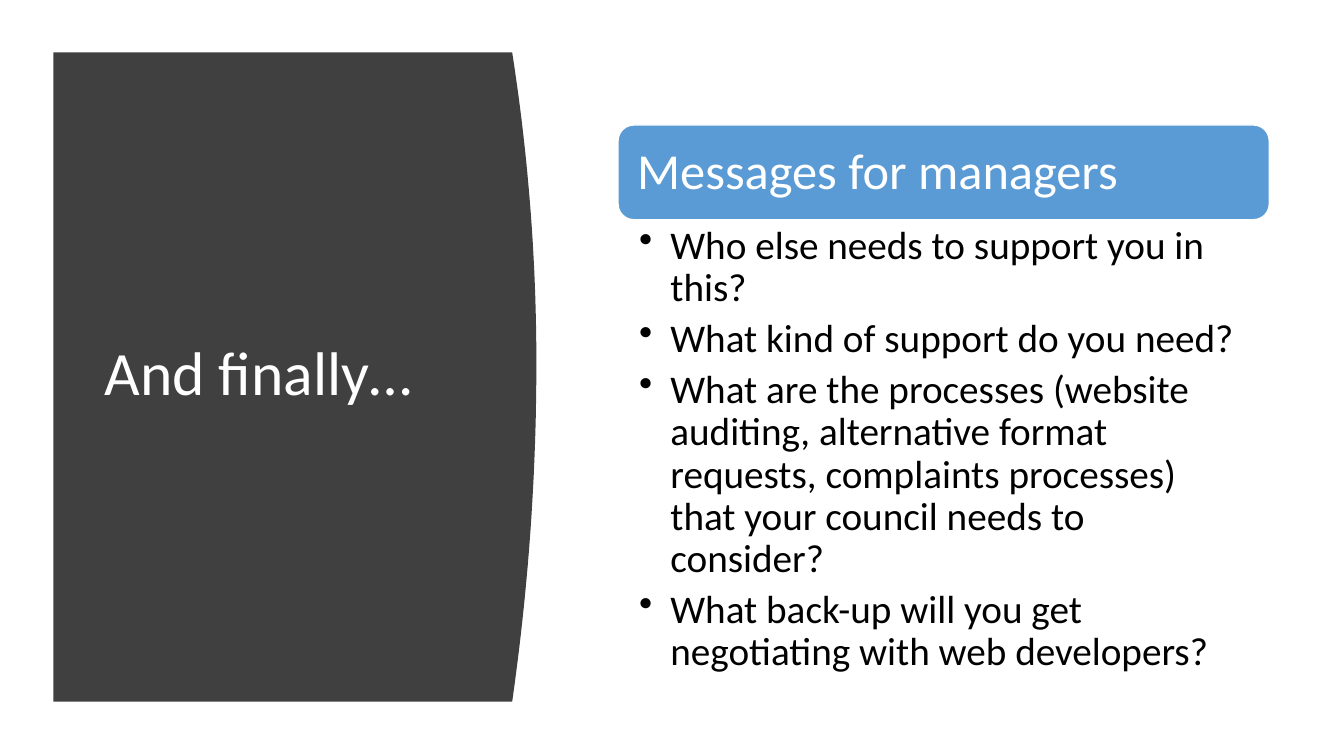
from dataclasses import dataclass

from lxml.etree import SubElement
from pptx import Presentation
from pptx.dml.color import RGBColor
from pptx.enum.shapes import MSO_SHAPE
from pptx.enum.text import MSO_ANCHOR
from pptx.oxml.ns import qn
from pptx.shapes.autoshape import Shape
from pptx.slide import Slide
from pptx.util import Inches, Pt

FONT = "Calibri"
WHITE, BLACK, CHARCOAL, BLUE = "FFFFFF", "000000", "404040", "5B9BD5"
BULLET_INDENT = 0.31


@dataclass(frozen=True)
class Box:
    left: float
    top: float
    width: float
    height: float

    def lengths(self) -> list[int]:
        return [Inches(v) for v in (self.left, self.top, self.width, self.height)]


@dataclass(frozen=True)
class Panel:
    left: float
    top: float
    edge: float      # right side at the top and bottom corners
    bottom: float
    bulge: float     # how far the right side swells
    peak: float      # height on the slide of the widest point


PANEL = Panel(left=0.53, top=0.52, edge=5.08, bottom=6.96, bulge=0.24, peak=3.6)
TITLE_BOX = Box(0.94, 1.11, 3.74, 5.24)
HEADING_BOX = Box(6.13, 1.24, 6.46, 0.94)
HEADING_TEXT_BOX = Box(6.17, 1.29, 6.37, 0.85)
QUESTIONS_BOX = Box(6.13, 2.19, 6.46, 4.73)
QUESTIONS = [
    "Who else needs to support you in this?",
    "What kind of support do you need?",
    "What are the processes (website auditing, alternative format requests, "
    "complaints processes) that your council needs to consider?",
    "What back-up will you get negotiating with web developers?",
]


def color(value: str) -> RGBColor:
    return RGBColor.from_string(value)


def fill_shape(shape: Shape, fill: str, line: str | None = None) -> None:
    shape.shadow.inherit = False
    shape.fill.solid()
    shape.fill.fore_color.rgb = color(fill)
    if line:
        shape.line.color.rgb = color(line)
        shape.line.width = Pt(1)
    else:
        shape.line.fill.background()


def add_curved_panel(slide: Slide, panel: Panel, steps: int = 48) -> None:
    """Draw a block whose right side is two half parabolas meeting at the peak."""
    curve = []
    for step in range(steps + 1):
        y = panel.top + (panel.bottom - panel.top) * step / steps
        end = panel.top if y < panel.peak else panel.bottom
        offset = (y - panel.peak) / (end - panel.peak)
        curve.append((panel.edge + panel.bulge * (1 - offset**2), y))
    outline = [*curve, (panel.left, panel.bottom)]
    builder = slide.shapes.build_freeform(
        Inches(panel.left), Inches(panel.top), scale=1.0
    )
    builder.add_line_segments([(Inches(x), Inches(y)) for x, y in outline])
    fill_shape(builder.convert_to_shape(), CHARCOAL)


def add_text(
    slide: Slide,
    box: Box,
    paragraphs: list[str],
    *,
    size: float,
    ink: str = WHITE,
    anchor: MSO_ANCHOR = MSO_ANCHOR.MIDDLE,
    insets: tuple[float, float, float, float] = (0.1, 0.05, 0.1, 0.05),
    space_after: float = 0,
    bulleted: bool = False,
) -> None:
    frame = slide.shapes.add_textbox(*box.lengths()).text_frame
    frame.word_wrap = True
    frame.vertical_anchor = anchor
    frame.margin_left, frame.margin_top, frame.margin_right, frame.margin_bottom = (
        Inches(inset) for inset in insets
    )
    for index, text in enumerate(paragraphs):
        paragraph = frame.paragraphs[0] if index == 0 else frame.add_paragraph()
        paragraph.text = text
        paragraph.line_spacing = 0.9
        paragraph.space_after = Pt(space_after)
        if bulleted:
            properties = paragraph._p.get_or_add_pPr()
            properties.set("marL", str(Inches(BULLET_INDENT)))
            properties.set("indent", str(-Inches(BULLET_INDENT)))
            SubElement(properties, qn("a:buChar")).set("char", "•")
        paragraph.font.name = FONT
        paragraph.font.size = Pt(size)
        paragraph.font.color.rgb = color(ink)


def main() -> None:
    presentation = Presentation()
    presentation.slide_width = Inches(13.33)
    presentation.slide_height = Inches(7.5)
    slide = presentation.slides.add_slide(presentation.slide_layouts[6])

    # Dark panel with the title
    add_curved_panel(slide, PANEL)
    add_text(slide, TITLE_BOX, ["And finally…"], size=44)

    # Heading bar
    heading_bar = slide.shapes.add_shape(
        MSO_SHAPE.ROUNDED_RECTANGLE, *HEADING_BOX.lengths()
    )
    fill_shape(heading_bar, BLUE, line=WHITE)
    add_text(
        slide, HEADING_TEXT_BOX, ["Messages for managers"],
        size=36, insets=(0.15, 0.15, 0.15, 0.15),
    )

    # Questions for managers
    add_text(
        slide, QUESTIONS_BOX, QUESTIONS,
        size=28, ink=BLACK, anchor=MSO_ANCHOR.TOP,
        insets=(0.21, 0.05, 0.28, 0.05), space_after=6, bulleted=True,
    )

    presentation.save("out.pptx")


if __name__ == "__main__":
    main()
